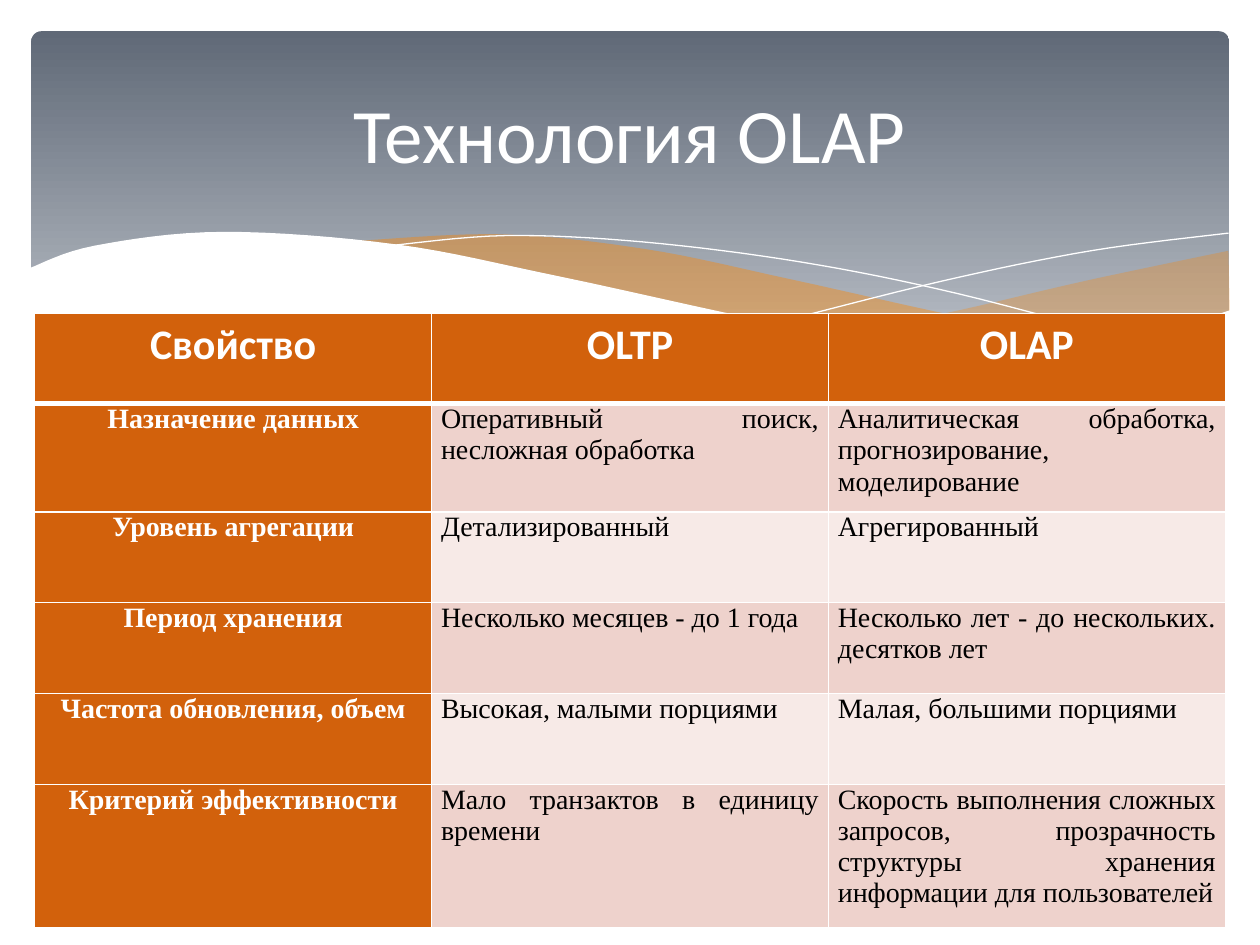
from dataclasses import dataclass
from typing import Optional

from lxml import etree
from pptx import Presentation
from pptx.dml.color import RGBColor
from pptx.enum.shapes import MSO_SHAPE
from pptx.enum.text import MSO_ANCHOR, PP_ALIGN
from pptx.oxml.ns import qn
from pptx.util import Cm, Pt

CENTER, JUSTIFY = PP_ALIGN.CENTER, PP_ALIGN.JUSTIFY
MIDDLE = MSO_ANCHOR.MIDDLE
ROUNDED = MSO_SHAPE.ROUNDED_RECTANGLE
WHITE, BLACK, ORANGE, AMBER = "FFFFFF", "000000", "D2610C", "FF8600"
BANDS = ("EED2CC", "F7EAE7")
KNOT_UNIT = Cm(2.54) / 100
CURVE_STEPS = 8
COLUMN_WIDTH = Cm(8)
ROW_HEIGHTS = (1.82, 2.18, 1.83, 1.83, 1.83, 2.9)
ROWS = (
    ("Свойство", "OLTP", "OLAP"),
    ("Назначение данных", "Оперативный поиск, несложная обработка",
     "Аналитическая обработка, прогнозирование, моделирование"),
    ("Уровень агрегации", "Детализированный", "Агрегированный"),
    ("Период хранения", "Несколько месяцев - до 1 года",
     "Несколько лет - до нескольких. десятков лет"),
    ("Частота обновления, объем", "Высокая, малыми порциями",
     "Малая, большими порциями"),
    ("Критерий эффективности", "Мало транзактов в единицу времени",
     "Скорость выполнения сложных запросов, прозрачность структуры "
     "хранения информации для пользователей"),
)


@dataclass
class Wave:
    """Smooth curves through knots, joined and either filled or stroked."""
    curves: list
    fill: Optional[str] = None
    opacity: int = 100


@dataclass
class CellStyle:
    """Fill and text format of one table cell."""
    fill: str
    color: str
    size: int
    font: str
    bold: bool
    align: PP_ALIGN


WAVES = (
    Wave([[(975, 199), (861, 223), (753, 248), (661, 265)],
          [(661, 265), (769, 277), (863, 275), (976, 247)]], AMBER, 29),
    Wave([[(893, 273), (775, 254), (629, 222), (514, 198), (399, 186), (286, 191)],
          [(286, 191), (404, 211), (566, 248), (695, 270), (796, 278), (893, 273)]],
         AMBER, 40),
    Wave([[(309, 195), (401, 187), (510, 192), (636, 208), (760, 233), (907, 272)]]),
    Wave([[(613, 257), (748, 223), (866, 199), (975, 185)]]),
    Wave([[(977, 246), (899, 269), (793, 276), (647, 262), (447, 220),
           (315, 194), (177, 184), (75, 195), (23, 213)],
          [(23, 329), (977, 329)]], WHITE),
)


def rgb(value: str) -> RGBColor:
    """Turn a hex string into a colour."""
    return RGBColor.from_string(value)


def smooth(knots: list) -> list:
    """Return points on a Catmull-Rom spline through the knots, in EMU."""
    padded = [knots[0], *knots, knots[-1]]
    points = []
    for quad in zip(padded, padded[1:], padded[2:], padded[3:]):
        for step in range(CURVE_STEPS):
            t = step / CURVE_STEPS
            points.append(tuple(
                KNOT_UNIT * (b + t / 2 * (c - a + t * (
                    2 * a - 5 * b + 4 * c - d + t * (3 * (b - c) + d - a))))
                for a, b, c, d in zip(*quad)))
    return points + [tuple(KNOT_UNIT * value for value in knots[-1])]


def draw_panel(slide) -> None:
    """Draw the rounded gradient panel behind the title."""
    panel = slide.shapes.add_shape(ROUNDED, Cm(0.63), Cm(0.63), Cm(24.15), Cm(6.86))
    panel.adjustments[0] = 0.03
    panel.shadow.inherit = False
    panel.line.fill.background()
    panel.fill.gradient()
    panel.fill.gradient_angle = 270
    stops = zip(panel.fill.gradient_stops, (0, 0.9), ("606977", "B5BBC3"))
    for stop, position, color in stops:
        stop.position = position
        stop.color.rgb = rgb(color)


def draw_wave(slide, wave: Wave) -> None:
    """Draw one wave as a filled outline or a hairline."""
    points = [point for knots in wave.curves for point in smooth(knots)]
    builder = slide.shapes.build_freeform(*points[0])
    builder.add_line_segments(points[1:], close=wave.fill is not None)
    shape = builder.convert_to_shape()
    shape.shadow.inherit = False
    if wave.fill is None:
        shape.fill.background()
        shape.line.color.rgb = rgb(WHITE)
        shape.line.width = Pt(0)
        return
    shape.line.fill.background()
    shape.fill.solid()
    shape.fill.fore_color.rgb = rgb(wave.fill)
    if wave.opacity < 100:
        color = shape.element.spPr.find(".//" + qn("a:srgbClr"))
        etree.SubElement(color, qn("a:alpha"), val=str(wave.opacity * 1000))


def set_borders(cell, top: int, bottom: int) -> None:
    """Give a cell white borders, with top and bottom widths in points."""
    properties = cell._tc.get_or_add_tcPr()
    widths = {"a:lnL": 1, "a:lnR": 1, "a:lnT": top, "a:lnB": bottom}
    for index, (tag, width) in enumerate(widths.items()):
        line = etree.Element(qn(tag), w=str(int(Pt(width))))
        fill = etree.SubElement(line, qn("a:solidFill"))
        etree.SubElement(fill, qn("a:srgbClr"), val=WHITE)
        properties.insert(index, line)


def style_for(row: int, column: int) -> CellStyle:
    """Choose the style of a cell from its place in the table."""
    if row == 0:
        return CellStyle(ORANGE, WHITE, 24, "Calibri", True, CENTER)
    if column == 0:
        return CellStyle(ORANGE, WHITE, 16, "Times New Roman", True, CENTER)
    return CellStyle(BANDS[(row - 1) % 2], BLACK, 16, "Times New Roman", False, JUSTIFY)


def fill_cell(cell, text: str, style: CellStyle) -> None:
    """Write and format the text of a cell."""
    cell.fill.solid()
    cell.fill.fore_color.rgb = rgb(style.fill)
    cell.text_frame.text = text
    paragraph = cell.text_frame.paragraphs[0]
    paragraph.alignment = style.align
    font = paragraph.runs[0].font
    font.name, font.size, font.bold = style.font, Pt(style.size), style.bold
    font.color.rgb = rgb(style.color)


def draw_table(slide) -> None:
    """Draw the comparison table."""
    frame = slide.shapes.add_table(len(ROWS), len(ROWS[0]), Cm(0.7), Cm(6.32),
                                   COLUMN_WIDTH * len(ROWS[0]), Cm(sum(ROW_HEIGHTS)))
    table = frame.table
    table.horz_banding = False
    for column in table.columns:
        column.width = COLUMN_WIDTH
    for row, (height, texts) in enumerate(zip(ROW_HEIGHTS, ROWS)):
        table.rows[row].height = Cm(height)
        for column, text in enumerate(texts):
            cell = table.cell(row, column)
            fill_cell(cell, text, style_for(row, column))
            if row > 0:
                cell.margin_left = cell.margin_right = Cm(0.19)
                cell.margin_top = cell.margin_bottom = 0
            set_borders(cell, 3 if row == 1 else 1, 3 if row == 0 else 1)


def place_title(slide) -> None:
    """Format the title and bring it to the front."""
    title = slide.shapes.title
    title.left, title.top, title.width, title.height = Cm(1.27), Cm(0.94), Cm(22.86), Cm(3.48)
    title.text_frame.text = "Технология OLAP"
    title.text_frame.vertical_anchor = MIDDLE
    paragraph = title.text_frame.paragraphs[0]
    paragraph.alignment = CENTER
    font = paragraph.runs[0].font
    font.name, font.size = "Calibri", Pt(44)
    font.color.rgb = rgb(WHITE)
    slide.shapes.element.append(title.element)


def main() -> None:
    """Build the slide and save it."""
    presentation = Presentation()
    presentation.slide_width, presentation.slide_height = Cm(25.4), Cm(19.05)
    slide = presentation.slides.add_slide(presentation.slide_layouts[5])
    draw_panel(slide)
    for wave in WAVES:
        draw_wave(slide, wave)
    draw_table(slide)
    place_title(slide)
    presentation.save("out.pptx")


if __name__ == "__main__":
    main()
